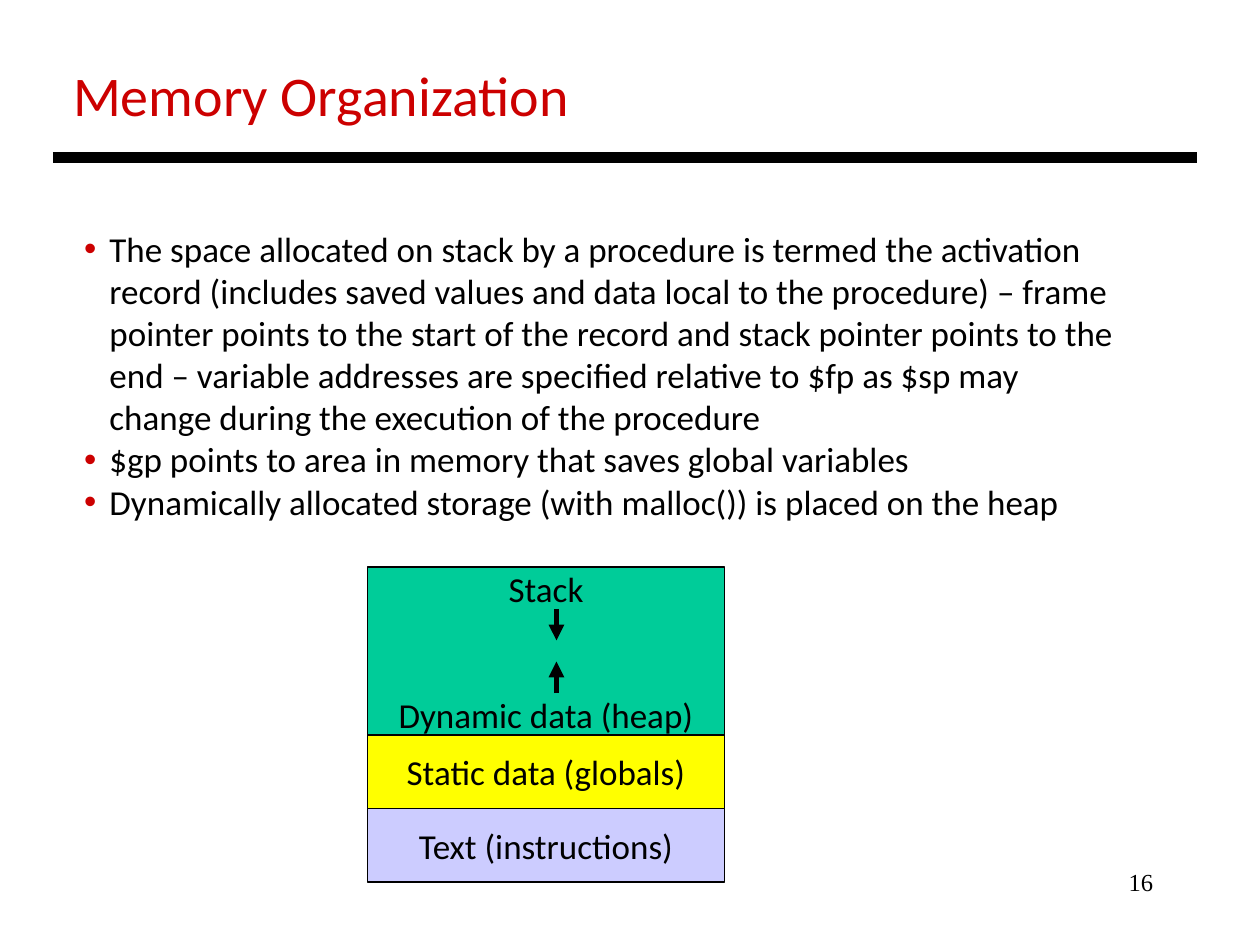
from dataclasses import dataclass

from lxml.etree import SubElement
from pptx import Presentation
from pptx.dml.color import RGBColor
from pptx.enum.shapes import MSO_CONNECTOR, MSO_SHAPE
from pptx.enum.text import MSO_ANCHOR, PP_ALIGN
from pptx.oxml.ns import qn
from pptx.util import Inches, Pt

TITLE = "Memory Organization"
PAGE_NUMBER = "16"
BULLETS = [
    "The space allocated on stack by a procedure is termed the activation "
    "record (includes saved values and data local to the procedure) – frame "
    "pointer points to the start of the record and stack pointer points to the "
    "end – variable addresses are specified relative to $fp as $sp may "
    "change during the execution of the procedure",
    "$gp points to area in memory that saves global variables",
    "Dynamically allocated storage (with malloc()) is placed on the heap",
]
# Memory regions from top to bottom: labels, fill, height in grid rows
REGIONS = [
    (["Stack", "Dynamic data (heap)"], "00CC99", 16),
    (["Static data (globals)"], "FFFF00", 7),
    (["Text (instructions)"], "CCCCFF", 7),
]
# Growth of stack and heap: first row, last row
GROWTH = [(58, 61), (66, 63)]

# The diagram's grid has twelve cells to the inch
CELL = Inches(1) / 12
MAP_LEFT, MAP_TOP, MAP_WIDTH = 35, 54, 34
ARROW_COLUMN = 53


@dataclass(frozen=True)
class Theme:
    font: str = "Calibri"
    number_font: str = "Times New Roman"
    ink: str = "000000"
    accent: str = "CC0000"
    title_size: int = 32
    body_size: int = 20
    number_size: int = 14
    rule_width: float = 6
    arrow_width: float = 3
    border_width: float = 0.75


THEME = Theme()


def grid(cells):
    return round(cells * CELL)


def inches(*lengths):
    return [Inches(length) for length in lengths]


def write(frame, lines, size, color=THEME.ink, font=THEME.font, align=PP_ALIGN.LEFT):
    frame.text = "\n".join(lines)
    for para in frame.paragraphs:
        para.alignment = align
        for span in para.runs:
            span.font.name = font
            span.font.size = Pt(size)
            span.font.color.rgb = RGBColor.from_string(color)


def add_bullet(para, hang):
    properties = para._p.get_or_add_pPr()
    properties.set("marL", str(hang))
    properties.set("indent", str(-hang))
    color = SubElement(properties, qn("a:buClr"))
    SubElement(color, qn("a:srgbClr"), val=THEME.accent)
    SubElement(properties, qn("a:buFont"), typeface="Arial")
    SubElement(properties, qn("a:buChar"), char="•")


def add_line(page, start, end, width, arrow=False):
    line = page.shapes.add_connector(MSO_CONNECTOR.STRAIGHT, *start, *end)
    line.line.color.rgb = RGBColor.from_string(THEME.ink)
    line.line.width = Pt(width)
    if arrow:
        SubElement(line.line._get_or_add_ln(), qn("a:tailEnd"), type="triangle")
    SubElement(line._element.spPr, qn("a:effectLst"))


def add_heading(page):
    title = page.shapes.title
    title.left, title.top, title.width, title.height = inches(0.48, 0.43, 9, 0.64)
    write(title.text_frame, [TITLE], THEME.title_size, THEME.accent)
    title.text_frame.vertical_anchor = MSO_ANCHOR.TOP
    add_line(page, inches(0.42, 1.25), inches(9.5, 1.25), THEME.rule_width)


def add_body(page):
    box = page.shapes.add_textbox(*inches(0.57, 1.76, 8.45, 2.46))
    box.text_frame.word_wrap = True
    write(box.text_frame, BULLETS, THEME.body_size)
    for para in box.text_frame.paragraphs:
        add_bullet(para, Inches(0.2))


def add_memory_map(page):
    top = MAP_TOP
    for labels, fill, rows in REGIONS:
        box = page.shapes.add_shape(
            MSO_SHAPE.RECTANGLE, grid(MAP_LEFT), grid(top), grid(MAP_WIDTH), grid(rows)
        )
        box.shadow.inherit = False
        box.fill.solid()
        box.fill.fore_color.rgb = RGBColor.from_string(fill)
        box.line.color.rgb = RGBColor.from_string(THEME.ink)
        box.line.width = Pt(THEME.border_width)
        frame = box.text_frame
        frame.margin_top = frame.margin_bottom = 0
        frame.vertical_anchor = MSO_ANCHOR.MIDDLE
        write(frame, labels, THEME.body_size, align=PP_ALIGN.CENTER)
        for para in frame.paragraphs[1:]:
            para.space_before = Pt(48)
        top += rows
    for first, last in GROWTH:
        start, end = [(grid(ARROW_COLUMN), grid(row)) for row in (first, last)]
        add_line(page, start, end, THEME.arrow_width, arrow=True)


def add_page_number(page):
    box = page.shapes.add_textbox(*inches(7.17, 6.83, 2.08, 0.5))
    box.text_frame.word_wrap = True
    write(box.text_frame, [PAGE_NUMBER], THEME.number_size,
          font=THEME.number_font, align=PP_ALIGN.RIGHT)


def main():
    deck = Presentation()
    deck.slide_width, deck.slide_height = inches(10, 7.5)
    page = deck.slides.add_slide(deck.slide_layouts[5])
    add_heading(page)
    add_body(page)
    add_memory_map(page)
    add_page_number(page)
    deck.save("out.pptx")


if __name__ == "__main__":
    main()
